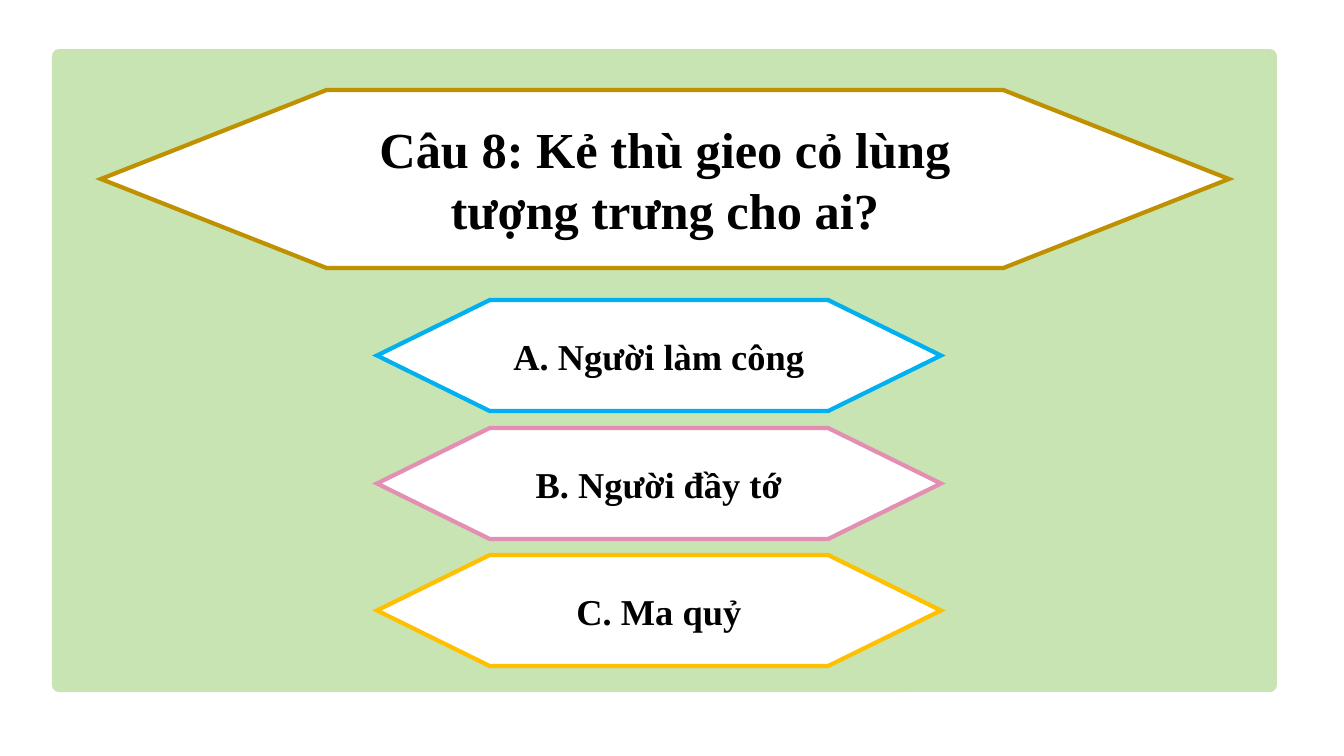
from dataclasses import dataclass

import pptx
import pptx.dml.color
import pptx.enum.shapes
import pptx.enum.text
import pptx.oxml
import pptx.oxml.ns
import pptx.util

QUESTION = "Câu 8: Kẻ thù gieo cỏ lùng tượng trưng cho ai?"
QUESTION_LINE = "BF9000"
ANSWERS = [
    ("A. Người làm công", "00B0F0"),
    ("B. Người đầy tớ", "E28FB3"),
    ("C. Ma quỷ", "FFC000"),
]

SLIDE_SIZE = (1344, 756)
PANEL_BOX = (52, 49, 1225, 643)
PANEL_RADIUS = 7
QUESTION_BOX = (101, 90, 1128, 178)
ANSWER_LEFT, ANSWER_WIDTH, ANSWER_HEIGHT = 377, 564, 111
ANSWER_TOPS = (300, 428, 555)
POINT_SHARE = 0.2


@dataclass(frozen=True)
class Theme:
    font: str = "Times New Roman"
    question_size: int = 36
    answer_size: int = 26
    border: int = 3
    panel: str = "C8E4B2"
    paper: str = "FFFFFF"
    ink: str = "000000"


THEME = Theme()


def px(length):
    return pptx.util.Emu(round(length * 914400 / 100.8))


def rgb(code):
    return pptx.dml.color.RGBColor.from_string(code)


def write(shape, text, size):
    frame = shape.text_frame
    frame.text = text
    frame.word_wrap = True
    frame.auto_size = pptx.enum.text.MSO_AUTO_SIZE.NONE
    frame.vertical_anchor = pptx.enum.text.MSO_ANCHOR.MIDDLE
    paragraph = frame.paragraphs[0]
    paragraph.alignment = pptx.enum.text.PP_ALIGN.CENTER
    paragraph.font.name = THEME.font
    paragraph.font.size = pptx.util.Pt(size)
    paragraph.font.bold = True
    paragraph.font.color.rgb = rgb(THEME.ink)


def add_shape(slide, kind, box, fill):
    shape = slide.shapes.add_shape(kind, *map(px, box))
    shape.shadow.inherit = False
    shape.fill.solid()
    shape.fill.fore_color.rgb = rgb(fill)
    return shape


def add_panel(slide):
    panel = add_shape(slide, pptx.enum.shapes.MSO_SHAPE.ROUNDED_RECTANGLE, PANEL_BOX, THEME.panel)
    panel.adjustments[0] = PANEL_RADIUS / PANEL_BOX[3]
    panel.line.fill.background()


def add_hexagon(slide, box, line):
    hexagon = add_shape(slide, pptx.enum.shapes.MSO_SHAPE.FLOWCHART_PREPARATION, box, THEME.paper)
    hexagon.line.color.rgb = rgb(line)
    hexagon.line.width = pptx.util.Pt(THEME.border)
    sharp_corner = pptx.oxml.parse_xml(f'<a:miter {pptx.oxml.ns.nsdecls("a")} lim="800000"/>')
    hexagon.element.spPr.find(pptx.oxml.ns.qn("a:ln")).append(sharp_corner)
    return hexagon


def add_question(slide):
    add_hexagon(slide, QUESTION_BOX, QUESTION_LINE)
    left, top, width, height = QUESTION_BOX
    point = width * POINT_SHARE
    question = slide.shapes.title
    question.left, question.top = px(left + point), px(top)
    question.width, question.height = px(width - 2 * point), px(height)
    write(question, QUESTION, THEME.question_size)
    slide.shapes.element.append(question.element)


def add_answers(slide):
    for (text, line), top in zip(ANSWERS, ANSWER_TOPS):
        answer = add_hexagon(slide, (ANSWER_LEFT, top, ANSWER_WIDTH, ANSWER_HEIGHT), line)
        write(answer, text, THEME.answer_size)


def main():
    deck = pptx.Presentation()
    deck.slide_width, deck.slide_height = map(px, SLIDE_SIZE)
    slide = deck.slides.add_slide(deck.slide_layouts[5])
    add_panel(slide)
    add_question(slide)
    add_answers(slide)
    deck.save("out.pptx")


if __name__ == "__main__":
    main()
